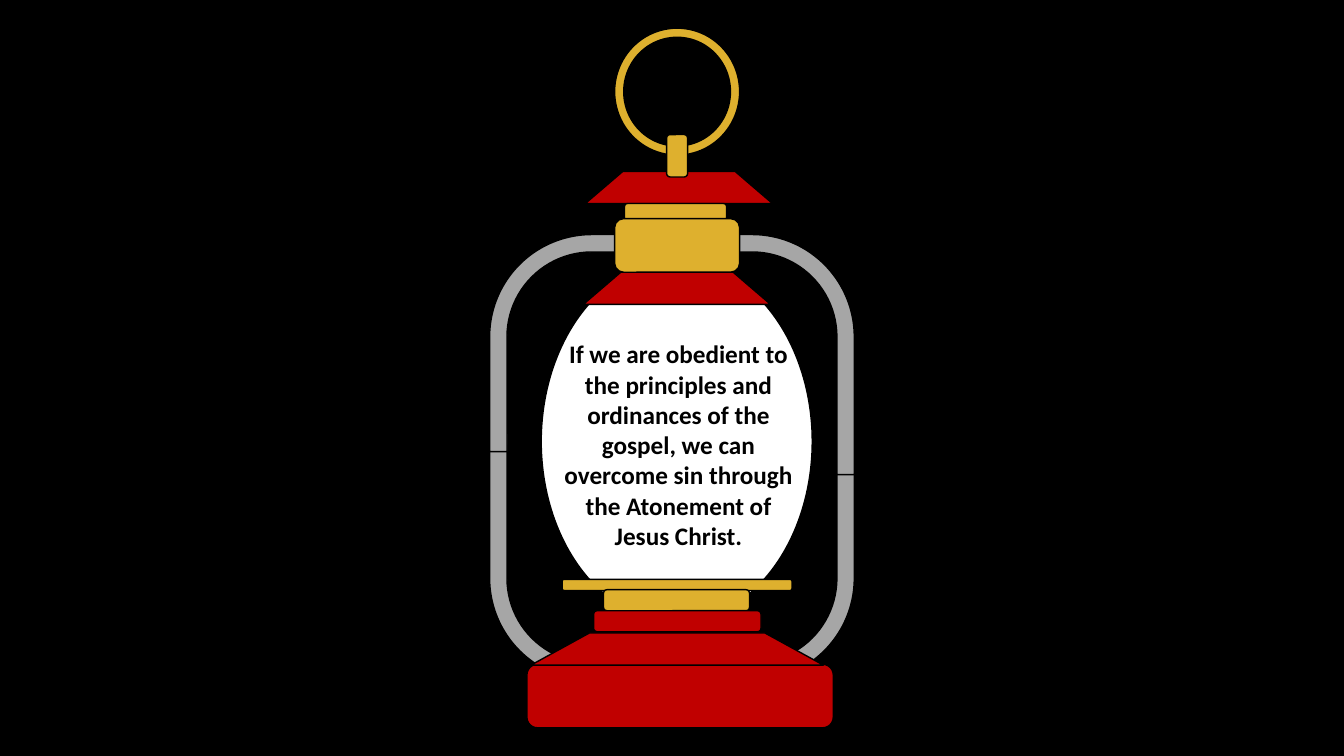
from pptx import Presentation
from pptx.dml.color import RGBColor
from pptx.enum import shapes, text
from pptx.util import Cm, Pt

BLACK = RGBColor(0x00, 0x00, 0x00)
WHITE = RGBColor(0xFF, 0xFF, 0xFF)
GREY = RGBColor(0xA6, 0xA6, 0xA6)
RED = RGBColor(0xC0, 0x00, 0x00)
GOLD = RGBColor(0xDE, 0xB0, 0x2E)

KIND = shapes.MSO_SHAPE
SLIDE_WIDTH, SLIDE_HEIGHT = 33.87, 19.05
LANTERN_BOX = (12.34, 0.71, 9.19, 17.63)
MESSAGE = ("If we are obedient to the principles and ordinances of the gospel, "
           "we can overcome sin through the Atonement of Jesus Christ.")


def add_part(parent, kind, box, colour, rotation=0, adjustments=()):
    """Add one filled, black-outlined part; box is left, top, width, height in cm."""
    part = parent.add_shape(kind, *map(Cm, box))
    part.shadow.inherit = False
    part.fill.solid()
    part.fill.fore_color.rgb = colour
    part.line.color.rgb = BLACK
    part.line.width = Pt(1)
    part.rotation = rotation
    for index, value in enumerate(adjustments):
        part.adjustments[index] = value
    return part


def add_frame(parent, box):
    """Four bent tubes, one for each corner of the frame."""
    left, top, width, height = box
    tube_width = 4.47
    right = left + width - tube_width
    tubes = [
        # left, top, height, flips
        (right, top + 10.39, 6.45, ("flipH", "flipV")),
        (right, top + 4.8, 6.45, ("flipH",)),
        (left, top + 9.88, 6.96, ("flipV",)),
        (left, top + 4.8, 5.87, ()),
    ]
    for x, y, tube_height, flips in tubes:
        tube = add_part(parent, KIND.BENT_ARROW, (x, y, tube_width, tube_height),
                        GREY, adjustments=(0.098, 0.139, 0.119, 0.576))
        for flip in flips:
            tube._element.spPr.xfrm.set(flip, "1")


def add_body(parent, box):
    """Globe, top and base, stacked from back to front."""
    left, top, width, height = box
    cone, block = KIND.FLOWCHART_MANUAL_OPERATION, KIND.ROUNDED_RECTANGLE
    parts = [
        # kind, left, top, width, height, colour, rotation, adjustments
        (KIND.OVAL, 1.3, 5.87, 6.83, 9.09, WHITE, 0, ()),         # globe
        (cone, 2.36, 6.15, 4.72, 0.81, RED, 180, ()),             # skirt
        (cone, 2.41, 3.61, 4.72, 0.81, RED, 180, ()),             # roof
        (block, 3.4, 4.42, 2.57, 0.43, GOLD, 0, ()),              # band
        (block, 3.15, 4.8, 3.15, 1.35, GOLD, 0, ()),              # collar
        (KIND.DONUT, 3.15, 0, 3.15, 3.2, GOLD, 0, (0.073,)),      # ring
        (block, 4.19, 2.95, 1.07, 0.53, GOLD, 270, ()),           # clip
        (block, 1.83, 13.89, 5.79, 0.28, GOLD, 0, ()),            # plate
        (block, 0.94, 16.03, 7.72, 1.6, RED, 0, ()),              # base
        (block, 2.87, 14.15, 3.68, 0.53, GOLD, 0, ()),            # burner
        (block, 2.62, 14.68, 4.22, 0.53, RED, 0, ()),             # neck
        (cone, 1.04, 15.24, 7.37, 0.81, RED, 180, ()),            # slope
    ]
    for kind, x, y, part_width, part_height, *style in parts:
        add_part(parent, kind, (left + x, top + y, part_width, part_height), *style)


def add_message(parent, box):
    """Bold text in front of the globe."""
    left, top, width, height = box
    message = parent.add_textbox(Cm(left + 1.42), Cm(top + 7.7), Cm(6.68), Cm(10.46))
    frame = message.text_frame
    frame.word_wrap = True
    frame.auto_size = text.MSO_AUTO_SIZE.SHAPE_TO_FIT_TEXT
    frame.text = MESSAGE
    para = frame.paragraphs[0]
    para.alignment = text.PP_ALIGN.CENTER
    span = para.runs[0]
    span.font.name = "Calibri"
    span.font.size = Pt(18)
    span.font.bold = True
    span.font.color.rgb = BLACK


def add_lantern(page, box):
    lantern = page.shapes.add_group_shape().shapes
    add_frame(lantern, box)
    add_body(lantern, box)
    add_message(lantern, box)


def main():
    deck = Presentation()
    deck.slide_width, deck.slide_height = Cm(SLIDE_WIDTH), Cm(SLIDE_HEIGHT)
    page = deck.slides.add_slide(deck.slide_layouts[6])
    # Night backdrop
    add_part(page.shapes, KIND.RECTANGLE, (0, 0, SLIDE_WIDTH, SLIDE_HEIGHT), BLACK)
    add_lantern(page, LANTERN_BOX)
    deck.save("out.pptx")


if __name__ == "__main__":
    main()
